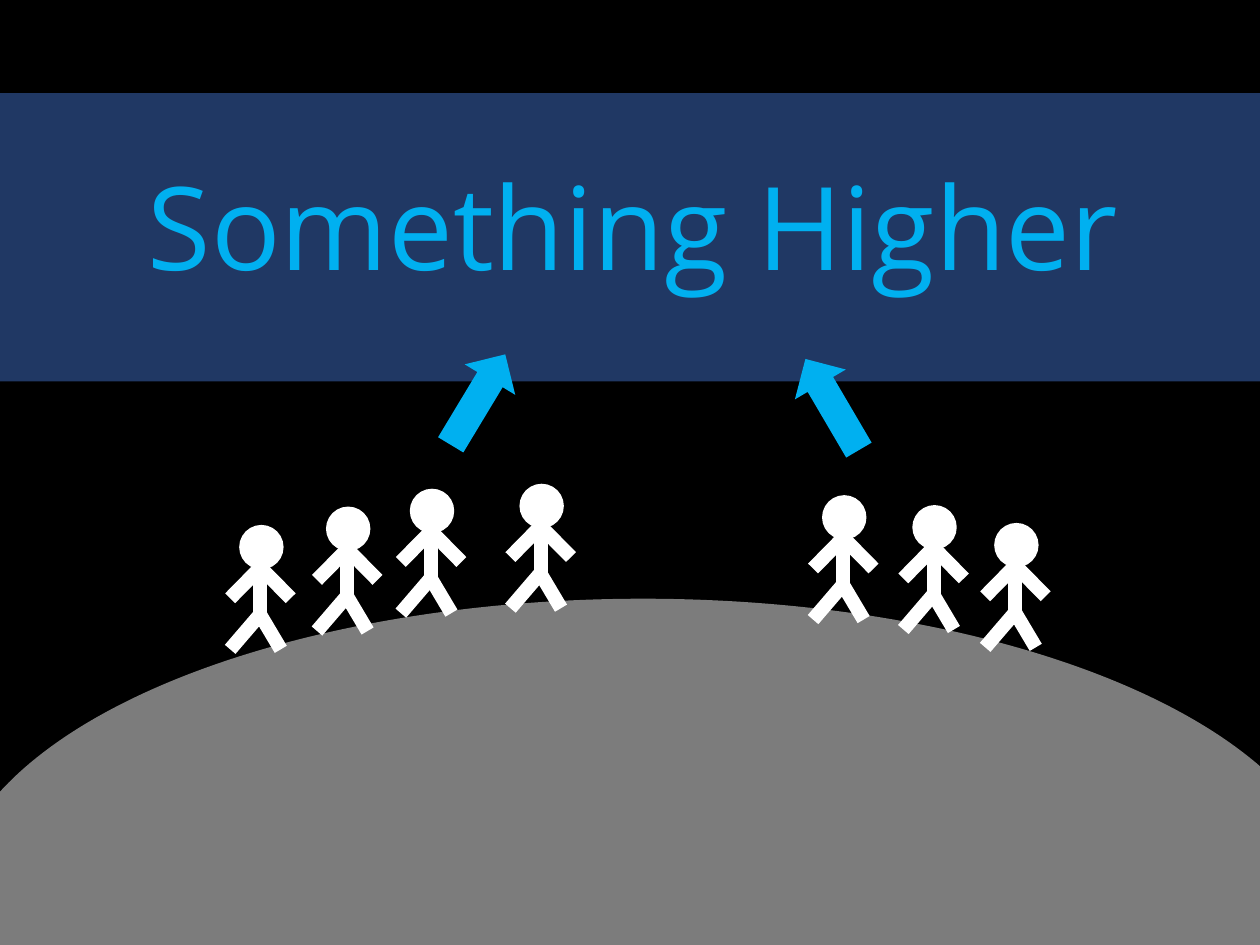
from dataclasses import dataclass

from lxml.etree import SubElement
from pptx import Presentation
from pptx.dml.color import RGBColor
from pptx.enum.shapes import MSO_CONNECTOR, MSO_SHAPE
from pptx.enum.text import MSO_AUTO_SIZE, PP_ALIGN
from pptx.oxml.ns import qn
from pptx.util import Cm, Pt


@dataclass(frozen=True)
class Theme:
    night: RGBColor = RGBColor(0x00, 0x00, 0x00)
    band: RGBColor = RGBColor(0x20, 0x38, 0x64)
    hill: RGBColor = RGBColor(0x7C, 0x7C, 0x7C)
    bright: RGBColor = RGBColor(0x00, 0xB0, 0xF0)
    white: RGBColor = RGBColor(0xFF, 0xFF, 0xFF)
    font: str = "Open Sans"
    title: Pt = Pt(66)
    limb: Pt = Pt(8)
    rim: Pt = Pt(1)


THEME = Theme()
WIDTH, HEIGHT = 25.4, 19.05

# Limbs of a person, from the top left of the box: x1, y1, x2, y2
LIMBS = (
    (0, 2.49, 0.61, 1.78),
    (0.61, 1.8, 1.02, 2.49),
    (0.61, 1.83, 0.61, 0.58),
    (0.61, 0.84, 0, 1.46),
    (0.61, 0.84, 1.22, 1.46),
)
HEAD = (0.2, 0, 0.86, 0.86)

# Top left of each person's box
CROWD = (
    (10.29, 9.77), (8.08, 9.87), (6.39, 10.23), (4.64, 10.6),
    (19.86, 10.56), (18.21, 10.2), (16.39, 10),
)


def add_solid(shapes, kind, box, fill):
    """Add a filled shape without outline or shadow."""
    shape = shapes.add_shape(kind, *map(Cm, box))
    shape.shadow.inherit = False
    shape.fill.solid()
    shape.fill.fore_color.rgb = fill
    shape.line.fill.background()
    return shape


def add_limb(shapes, ends):
    limb = shapes.add_connector(MSO_CONNECTOR.STRAIGHT, *map(Cm, ends))
    limb.line.color.rgb = THEME.white
    limb.line.width = THEME.limb
    SubElement(limb.element.spPr, qn("a:effectLst"))


def add_person(shapes, left, top):
    parts = shapes.add_group_shape().shapes
    for x1, y1, x2, y2 in LIMBS:
        add_limb(parts, (left + x1, top + y1, left + x2, top + y2))
    x, y, width, height = HEAD
    head = add_solid(parts, MSO_SHAPE.OVAL,
                     (left + x, top + y, width, height), THEME.white)
    head.line.color.rgb = THEME.white
    head.line.width = THEME.rim


def add_title(shapes, box, text):
    frame = shapes.add_textbox(*map(Cm, box)).text_frame
    frame.word_wrap = True
    frame.auto_size = MSO_AUTO_SIZE.SHAPE_TO_FIT_TEXT
    line = frame.paragraphs[0]
    line.text = text
    line.alignment = PP_ALIGN.CENTER
    line.font.name = THEME.font
    line.font.size = THEME.title
    line.font.color.rgb = THEME.bright


def add_arrow(shapes, box, angle):
    arrow = add_solid(shapes, MSO_SHAPE.DOWN_ARROW, box, THEME.bright)
    arrow.rotation = angle


def main():
    deck = Presentation()
    deck.slide_width, deck.slide_height = Cm(WIDTH), Cm(HEIGHT)
    slide = deck.slides.add_slide(deck.slide_layouts[6])
    slide.background.fill.solid()
    slide.background.fill.fore_color.rgb = THEME.night
    shapes = slide.shapes

    add_solid(shapes, MSO_SHAPE.RECTANGLE, (0, 1.88, WIDTH, 5.81), THEME.band)
    add_solid(shapes, MSO_SHAPE.OVAL, (-1.02, 12.07, 27.97, 12.45), THEME.hill)
    for left, top in CROWD:
        add_person(shapes, left, top)
    add_title(shapes, (1.52, 3, 22.5, 3.07), "Something Higher")
    add_arrow(shapes, (16.18, 7.09, 1.19, 2.13), 149.6)
    add_arrow(shapes, (9.04, 6.99, 1.19, 2.13), 211.1)
    deck.save("out.pptx")


if __name__ == "__main__":
    main()
